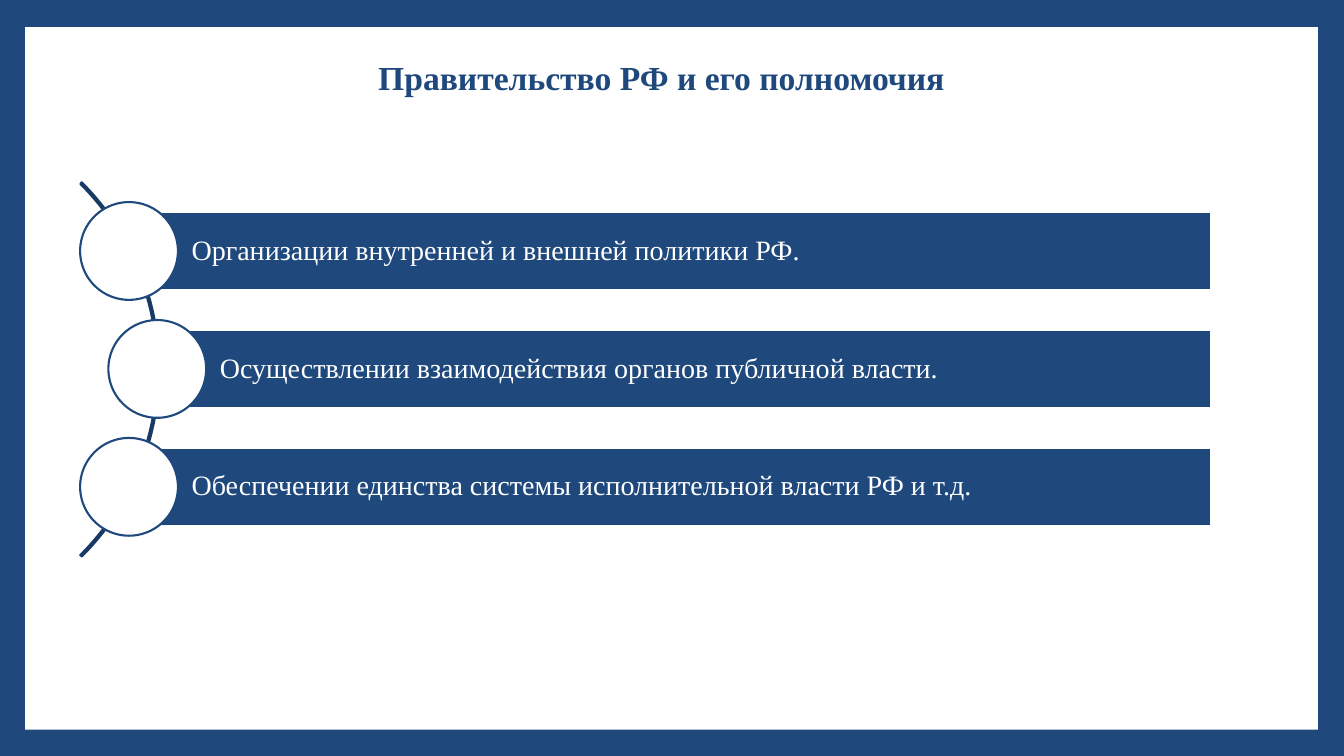
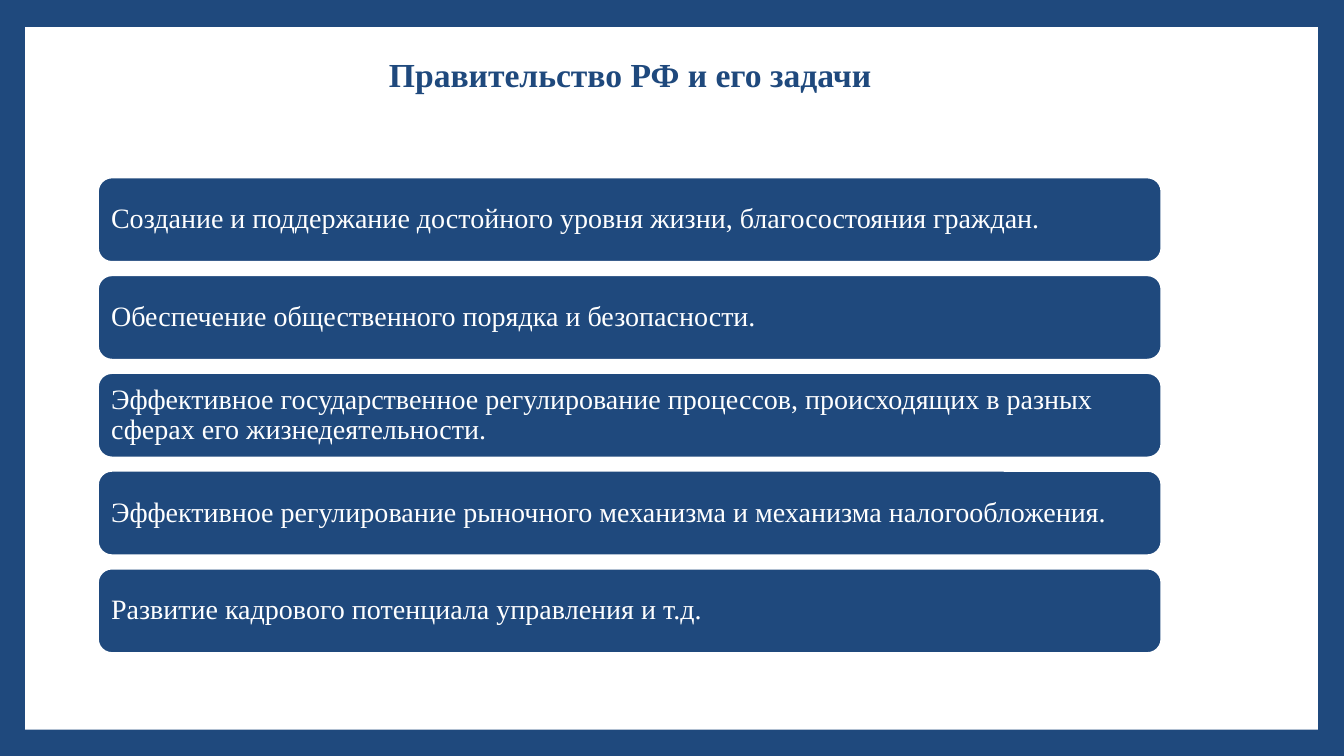
from pptx import Presentation
from pptx.dml.color import RGBColor
from pptx.enum.shapes import MSO_SHAPE
from pptx.enum.text import MSO_ANCHOR, PP_ALIGN
from pptx.util import Inches, Pt

COLORS = {"navy": "1F497D", "dark": "193A64", "white": "FFFFFF"}
FONT = "Times New Roman"

POWERS = {
    "title": "Правительство РФ и его полномочия",
    "at": (1.86, 0.28),
    "items": [
        "Организации внутренней и внешней политики РФ.",
        "Осуществлении взаимодействия органов публичной власти.",
        "Обеспечении единства системы исполнительной власти РФ и т.д.",
    ],
}
TASKS = {
    "title": "Правительство РФ и его задачи",
    "at": (1.55, 0.25),
    "items": [
        "Создание и поддержание достойного уровня жизни, благосостояния граждан.",
        "Обеспечение общественного порядка и безопасности.",
        "Эффективное государственное регулирование процессов, происходящих "
        "в разных сферах его жизнедеятельности.",
        "Эффективное регулирование рыночного механизма и механизма налогообложения.",
        "Развитие кадрового потенциала управления и т.д.",
    ],
}


def color(name):
    return RGBColor.from_string(COLORS[name])


def add_shape(slide, kind, box, fill=None, line=None):
    shape = slide.shapes.add_shape(kind, *map(Inches, box))
    shape.shadow.inherit = False
    if fill:
        shape.fill.solid()
        shape.fill.fore_color.rgb = color(fill)
    else:
        shape.fill.background()
    if line:
        shape.line.color.rgb = color(line)
        shape.line.width = Pt(1.5)
    else:
        shape.line.fill.background()
    return shape


def write(shape, text, size, ink, align, insets, bold=False):
    frame = shape.text_frame
    frame.word_wrap = True
    frame.vertical_anchor = MSO_ANCHOR.MIDDLE
    (frame.margin_left, frame.margin_top,
     frame.margin_right, frame.margin_bottom) = map(Inches, insets)
    para = frame.paragraphs[0]
    para.alignment = align
    para.line_spacing = 0.9
    run = para.add_run()
    run.text = text
    font = run.font
    font.name, font.size, font.bold = FONT, Pt(size), bold
    font.color.rgb = color(ink)


def add_bar(slide, kind, box, text, insets):
    bar = add_shape(slide, kind, box, "navy", "white")
    write(bar, text, 20, "white", PP_ALIGN.LEFT, insets)


def add_slide(prs, data):
    """Add a slide with the white panel and the title."""
    slide = prs.slides.add_slide(prs.slide_layouts[6])
    add_shape(slide, MSO_SHAPE.RECTANGLE, (0.25, 0.27, 12.82, 6.97), "white")
    title = slide.shapes.add_textbox(*map(Inches, (*data["at"], 9.4, 1.03)))
    write(title, data["title"], 24, "navy", PP_ALIGN.CENTER,
          (0.1, 0.05, 0.1, 0.05), bold=True)
    return slide


def add_powers(prs):
    slide = add_slide(prs, POWERS)
    arc = add_shape(slide, MSO_SHAPE.BLOCK_ARC, (-3.67, 1.04, 5.25, 5.25), line="dark")
    for i, value in enumerate((189, 27, 0.004)):
        arc.adjustments[i] = value

    top, pitch, height, right, disc = 2.1, 1.17, 0.78, 12.01, 0.97
    for i, text in enumerate(POWERS["items"]):
        left = 1.56 if i % 2 else 1.28
        y = top + i * pitch
        add_bar(slide, MSO_SHAPE.RECTANGLE, (left, y, right - left, height),
                text, (0.62, 0.06, 0.06, 0.06))
        add_shape(slide, MSO_SHAPE.OVAL,
                  (left - disc / 2, y + (height - disc) / 2, disc, disc),
                  "white", "navy")


def add_tasks(prs):
    slide = add_slide(prs, TASKS)
    top, pitch = 1.76, 0.97
    for i, text in enumerate(TASKS["items"]):
        add_bar(slide, MSO_SHAPE.ROUNDED_RECTANGLE,
                (0.97, top + i * pitch, 10.55, 0.84),
                text, (0.09, 0.08, 0.09, 0.08))


def main():
    prs = Presentation()
    prs.slide_width, prs.slide_height = Inches(13.33), Inches(7.5)
    back = prs.slide_master.background.fill
    back.solid()
    back.fore_color.rgb = color("navy")
    add_powers(prs)
    add_tasks(prs)
    prs.save("out.pptx")


if __name__ == "__main__":
    main()
